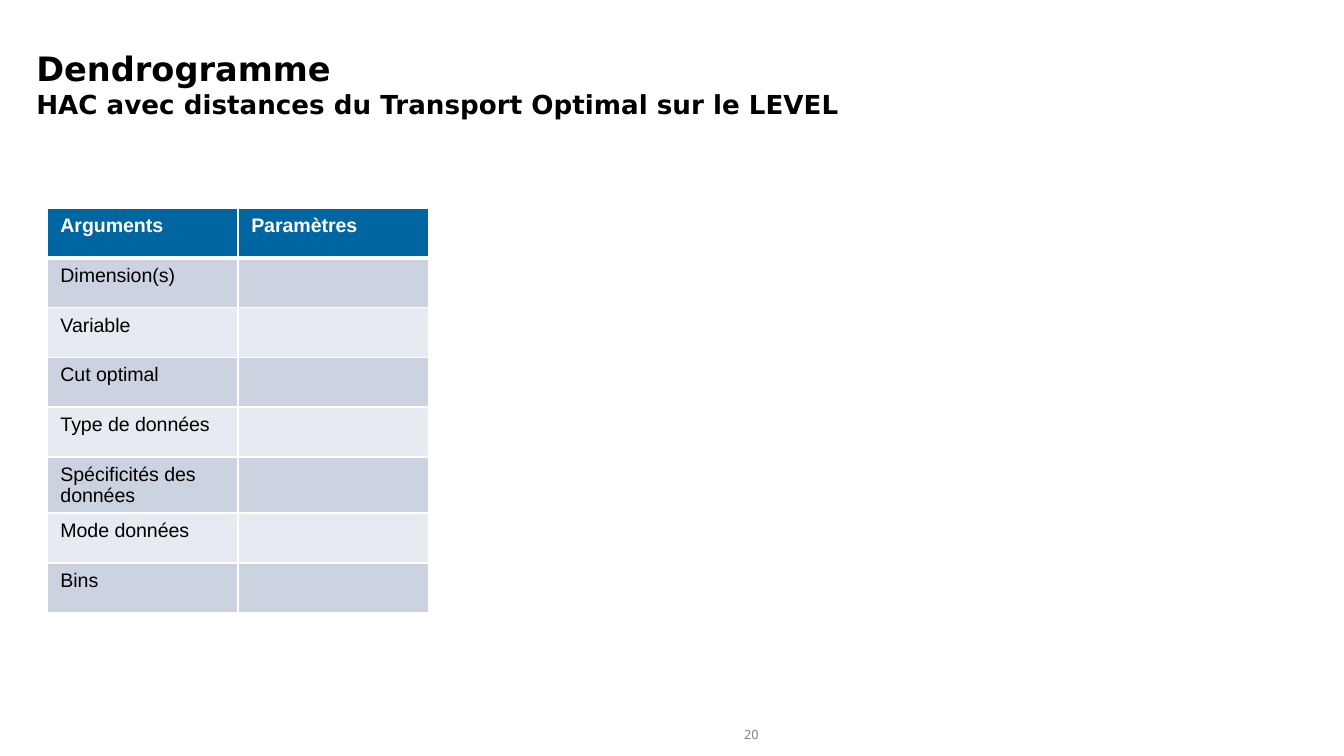
from pptx import Presentation
from pptx.dml.color import RGBColor as RGB
from pptx.enum.text import MSO_ANCHOR as Anchor, MSO_AUTO_SIZE as Fit, PP_ALIGN as Align
from pptx.oxml.ns import qn
from pptx.util import Inches, Pt
from lxml.etree import SubElement as Sub

WIDE = Inches(10)
HIGH = WIDE * 9 // 16
BLACK = RGB(0, 0, 0)
WHITE = RGB(0xFF, 0xFF, 0xFF)
GREY = RGB(0x81, 0x81, 0x81)
BLUE = RGB(0x00, 0x66, 0xA1)
DARK = RGB(0xCC, 0xD3, 0xE0)
LIGHT = RGB(0xE7, 0xEA, 0xF0)

TITLE = [("Dendrogramme", 18),
         ("HAC avec distances du Transport Optimal sur le LEVEL", 14)]
ROWS = [("Arguments", "Paramètres"), ("Dimension(s)", ""), ("Variable", ""),
        ("Cut optimal", ""), ("Type de données", ""),
        ("Spécificités des données", ""), ("Mode données", ""), ("Bins", "")]
COL, ROW = Inches(1.42), Inches(0.37)
TEXT = 10.5


def style(font, size, name, color, bold=False):
    values = {"size": Pt(size), "name": name, "bold": bold}
    for key, value in values.items():
        setattr(font, key, value)
    font.color.rgb = color


def place(shape, left, top, width, height):
    """Set the frame as percentages of the slide's size."""
    frame = {"left": left * WIDE, "top": top * HIGH,
             "width": width * WIDE, "height": height * HIGH}
    for key, value in frame.items():
        setattr(shape, key, int(value / 100))


def add_title(slide):
    title = slide.shapes.title
    place(title, 1.7, 5.5, 75.9, 11)
    frame = title.text_frame
    frame.auto_size = Fit.NONE
    frame.vertical_anchor = Anchor.TOP
    para = frame.paragraphs[0]
    para.alignment = Align.LEFT
    for i, (text, size) in enumerate(TITLE):
        if i:
            para.add_line_break()
        run = para.add_run()
        run.text = text
        style(run.font, size, "DejaVu Sans", BLACK, True)


def add_border(cell, sides):
    """Draw white cell sides, given as tag to width in points."""
    props = cell._tc.get_or_add_tcPr()
    for tag, width in sides.items():
        line = Sub(props, qn(f"a:{tag}"), w=str(Pt(width)))
        fill = Sub(line, qn("a:solidFill"))
        Sub(fill, qn("a:srgbClr"), val=str(WHITE))


def fill_cell(cell, text, row):
    head = row == 0
    add_border(cell, {"lnL": 1, "lnR": 1, "lnT": 3 if row == 1 else 1,
                      "lnB": 3 if head else 1})
    cell.margin_bottom = Inches(0.02)
    cell.fill.solid()
    cell.fill.fore_color.rgb = BLUE if head else DARK if row % 2 else LIGHT
    para = cell.text_frame.paragraphs[0]
    if text:
        run = para.add_run()
        run.text = text
        style(run.font, TEXT, "Arial", WHITE if head else BLACK, head)
    else:
        # Keeps an empty cell from stretching its row
        Sub(para._p, qn("a:endParaRPr"), sz=str(int(TEXT * 100)))


def add_grid(slide):
    rows, cols = len(ROWS), len(ROWS[0])
    table = slide.shapes.add_table(rows, cols, Inches(0.35), Inches(1.55),
                                   cols * COL, rows * ROW).table
    for r, texts in enumerate(ROWS):
        for c, text in enumerate(texts):
            fill_cell(table.cell(r, c), text, r)


def add_number(slide, text):
    box = slide.shapes.add_textbox(0, 0, 0, 0)
    place(box, 52.5, 95.3, 6.8, 3.6)
    frame = box.text_frame
    values = {"word_wrap": True, "vertical_anchor": Anchor.MIDDLE,
              "margin_left": Inches(0.08), "margin_right": Inches(0.08),
              "margin_top": Inches(0.04), "margin_bottom": Inches(0.04)}
    for key, value in values.items():
        setattr(frame, key, value)
    para = frame.paragraphs[0]
    para.alignment = Align.CENTER
    run = para.add_run()
    run.text = text
    style(run.font, 6.8, "Noto Sans", GREY)


def main():
    deck = Presentation()
    deck.slide_width, deck.slide_height = WIDE, HIGH
    slide = deck.slides.add_slide(deck.slide_layouts[5])
    add_number(slide, "20")
    add_title(slide)
    add_grid(slide)
    deck.save("out.pptx")


if __name__ == "__main__":
    main()
